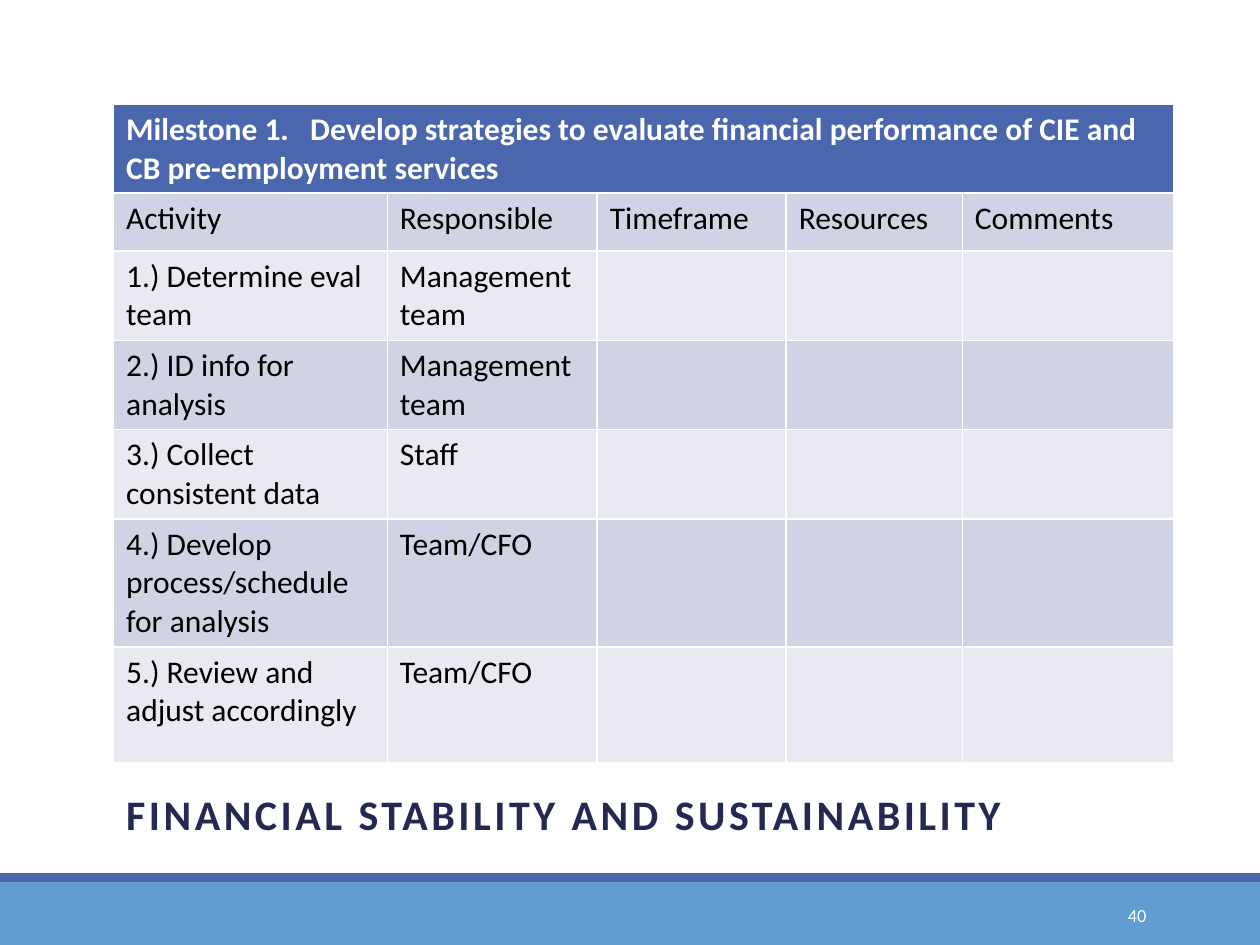
"""Build the financial stability milestone slide."""
from dataclasses import dataclass

from pptx import Presentation
from pptx.dml.color import RGBColor
from pptx.enum import shapes, text
from pptx.util import Cm, Pt

NAVY = RGBColor(0x24, 0x28, 0x52)
BLUE = RGBColor(0x4A, 0x66, 0xAC)
SKY = RGBColor(0x62, 0x9D, 0xD1)
DARK_BAND = RGBColor(0xD0, 0xD3, 0xE3)
LIGHT_BAND = RGBColor(0xE9, 0xEA, 0xF1)
WHITE = RGBColor(0xFF, 0xFF, 0xFF)
BLACK = RGBColor(0, 0, 0)
FONT = "Calibri"

SLIDE_WIDTH, SLIDE_HEIGHT = 25.4, 19.05
TABLE_LEFT, TABLE_TOP = 2.29, 2.11
COLUMN_WIDTHS = (5.52, 4.23, 3.81, 3.55, 4.27)
MILESTONE = ("Milestone 1.   Develop strategies to evaluate financial "
             "performance of CIE and CB pre-employment services")
HEADINGS = ("Activity", "Responsible", "Timeframe", "Resources", "Comments")


@dataclass(frozen=True)
class Step:
    activity: str
    responsible: str
    height: float


@dataclass(frozen=True)
class Band:
    top: float
    height: float
    color: RGBColor


STEPS = (
    Step("1.) Determine eval team", "Management team", 1.8),
    Step("2.) ID info for analysis", "Management team", 1.8),
    Step("3.) Collect consistent data", "Staff", 1.8),
    Step("4.) Develop process/schedule for analysis", "Team/CFO", 2.58),
    Step("5.) Review and adjust accordingly", "Team/CFO", 2.33),
)
FOOTER = (Band(17.78, 1.27, SKY), Band(17.6, 0.18, BLUE))


def write(frame, words: str, size: float, color: RGBColor, bold: bool = False):
    """Put one formatted paragraph in a text frame and return it."""
    frame.text = words
    paragraph = frame.paragraphs[0]
    font = paragraph.font
    font.name, font.size, font.bold = FONT, Pt(size), bold
    font.color.rgb = color
    return paragraph


def draw_band(slide, band: Band) -> None:
    """Draw a full-width footer band."""
    strip = slide.shapes.add_shape(shapes.MSO_SHAPE.RECTANGLE, 0, Cm(band.top),
                                   Cm(SLIDE_WIDTH), Cm(band.height))
    strip.shadow.inherit = False
    strip.fill.solid()
    strip.fill.fore_color.rgb = band.color
    strip.line.fill.background()


def draw_plan(slide) -> None:
    """Draw the milestone table."""
    heights = (1.76, 1.17, *(step.height for step in STEPS))
    rows = ((MILESTONE,), HEADINGS,
            *((step.activity, step.responsible) for step in STEPS))
    plan = slide.shapes.add_table(
        len(rows), len(COLUMN_WIDTHS), Cm(TABLE_LEFT), Cm(TABLE_TOP),
        Cm(sum(COLUMN_WIDTHS)), Cm(sum(heights))).table
    for column, width in zip(plan.columns, COLUMN_WIDTHS):
        column.width = Cm(width)
    plan.cell(0, 0).merge(plan.cell(0, len(COLUMN_WIDTHS) - 1))
    for index, (row, height, entries) in enumerate(zip(plan.rows, heights, rows)):
        row.height = Cm(height)
        header = index == 0
        shade = BLUE if header else DARK_BAND if index % 2 else LIGHT_BAND
        for cell in row.cells:
            cell.fill.solid()
            cell.fill.fore_color.rgb = shade
        for cell, entry in zip(row.cells, entries):
            write(cell.text_frame, entry, 18, WHITE if header else BLACK, header)


def draw_heading(slide) -> None:
    """Fill the body placeholder with the slide heading."""
    heading = slide.placeholders[1]
    heading.left, heading.top = Cm(TABLE_LEFT), Cm(15.88)
    heading.width, heading.height = Cm(21.41), Cm(2.74)
    frame = heading.text_frame
    frame.vertical_anchor = text.MSO_ANCHOR.TOP
    paragraph = write(frame, "FINANCIAL STABILITY AND SUSTAINABILITY", 24, NAVY, True)
    paragraph.line_spacing = 0.9
    paragraph.space_before, paragraph.space_after = Pt(12), Pt(2)
    paragraph.runs[0].font._element.set("spc", "200")


def draw_page_number(slide) -> None:
    """Place the page number in the footer."""
    number = slide.shapes.add_textbox(Cm(20.62), Cm(17.93), Cm(2.74), Cm(1.02))
    frame = number.text_frame
    frame.word_wrap = True
    frame.vertical_anchor = text.MSO_ANCHOR.MIDDLE
    write(frame, "40", 10.5, WHITE).alignment = text.PP_ALIGN.RIGHT


def main() -> None:
    """Assemble and save the slide."""
    deck = Presentation()
    deck.slide_width, deck.slide_height = Cm(SLIDE_WIDTH), Cm(SLIDE_HEIGHT)
    slide = deck.slides.add_slide(deck.slide_layouts[2])
    title = slide.shapes.title._element
    title.getparent().remove(title)
    for band in FOOTER:
        draw_band(slide, band)
    draw_heading(slide)
    draw_page_number(slide)
    draw_plan(slide)
    deck.save("out.pptx")


if __name__ == "__main__":
    main()
